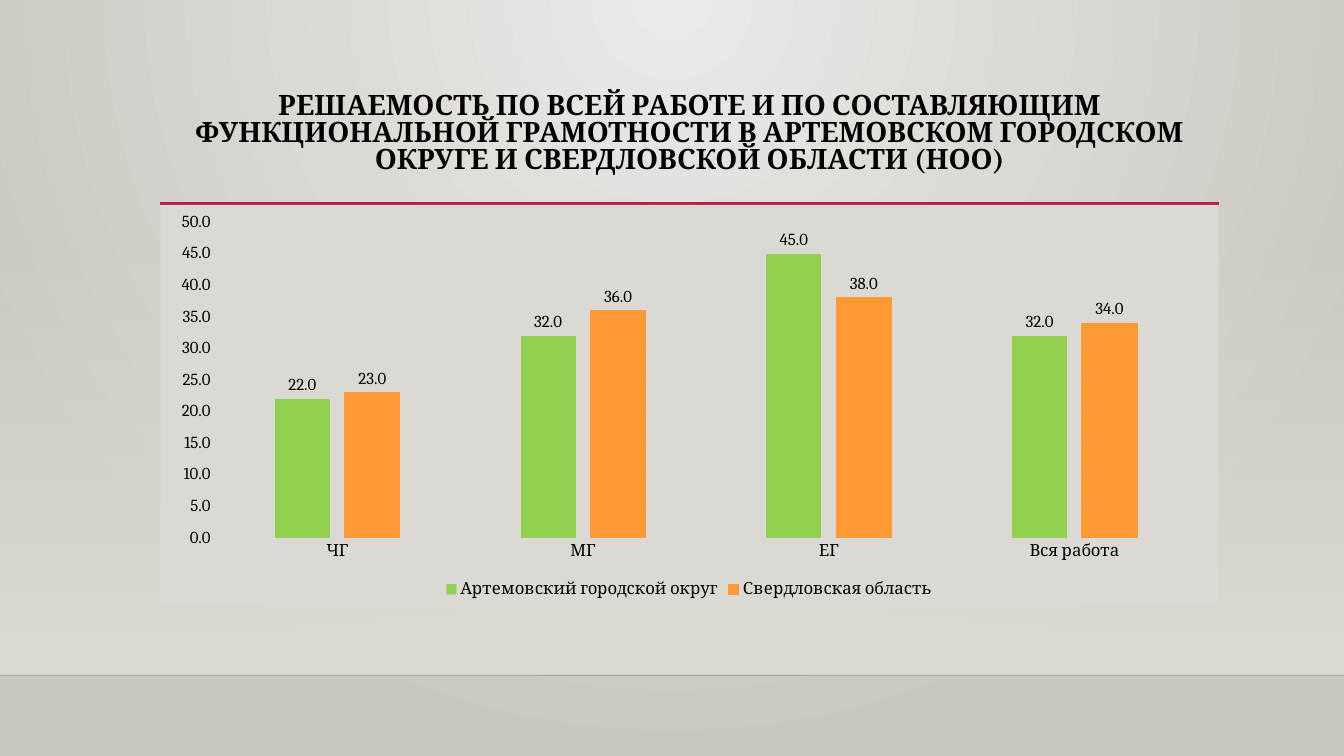
from dataclasses import dataclass

from lxml import etree
from pptx import Presentation
from pptx.chart.data import CategoryChartData
from pptx.dml.color import RGBColor
from pptx.enum.chart import XL_CHART_TYPE, XL_LABEL_POSITION, XL_LEGEND_POSITION, XL_TICK_MARK
from pptx.enum.shapes import MSO_CONNECTOR, MSO_SHAPE
from pptx.enum.text import MSO_ANCHOR, PP_ALIGN
from pptx.oxml import parse_xml
from pptx.oxml.ns import nsdecls, qn
from pptx.util import Cm, Pt

COLUMNS = XL_CHART_TYPE.COLUMN_CLUSTERED
OUTSIDE_END = XL_LABEL_POSITION.OUTSIDE_END
LEGEND_BOTTOM = XL_LEGEND_POSITION.BOTTOM
NO_TICKS = XL_TICK_MARK.NONE
STRAIGHT = MSO_CONNECTOR.STRAIGHT
RECTANGLE = MSO_SHAPE.RECTANGLE
TOP = MSO_ANCHOR.TOP
CENTER = PP_ALIGN.CENTER


@dataclass(frozen=True)
class Theme:
    font: str = "Cambria"
    title_size: int = 20
    chart_size: int = 12
    text: str = "000000"
    glow: str = "ECEAE7"
    edge: str = "CAC7C1"
    wall: str = "DFDBD5"
    floor_line: str = "000001"
    accent: str = "B71E42"
    chart_fill: str = "DCD9D4"
    grid: str = "D9D9D9"
    district: str = "92D050"
    region: str = "FF9933"


THEME = Theme()

# Slide measures in centimetres
SLIDE_WIDTH, SLIDE_HEIGHT = 33.87, 19.05
LEFT, CONTENT_WIDTH = 4.04, 26.67
WALL_TOP, FLOOR = 5.61, 17.02
RULE_TOP, RULE_END = 5.13, 30.73

TITLE = ("РЕШАЕМОСТЬ ПО ВСЕЙ РАБОТЕ И ПО СОСТАВЛЯЮЩИМ ФУНКЦИОНАЛЬНОЙ ГРАМОТНОСТИ "
         "В АРТЕМОВСКОМ ГОРОДСКОМ ОКРУГЕ И СВЕРДЛОВСКОЙ ОБЛАСТИ (НОО)")
CATEGORIES = ["ЧГ", "МГ", "ЕГ", "Вся работа"]
SERIES = [
    ("Артемовский городской округ", (22, 32, 45, 32), THEME.district),
    ("Свердловская область", (23, 36, 38, 34), THEME.region),
]


def rgb(color):
    return RGBColor.from_string(color)


def set_font(font, size, color=THEME.text, bold=False):
    font.name = THEME.font
    font.size = Pt(size)
    font.bold = bold
    font.color.rgb = rgb(color)


def set_line(line, color, width):
    line.color.rgb = rgb(color)
    line.width = Pt(width)


def set_gradient(properties, stops, direction):
    """Replace a solid fill by a gradient of (position, color, opacity) stops."""
    stop_xml = "".join(
        f'<a:gs pos="{position * 1000}"><a:srgbClr val="{color}">'
        f'<a:alpha val="{opacity * 1000}"/></a:srgbClr></a:gs>'
        for position, color, opacity in stops)
    gradient = parse_xml(f'<a:gradFill {nsdecls("a")} rotWithShape="1">'
                         f'<a:gsLst>{stop_xml}</a:gsLst>{direction}</a:gradFill>')
    properties.replace(properties.find(qn("a:solidFill")), gradient)


def add_background(slide):
    slide.background.fill.solid()
    properties = slide.element.find(".//" + qn("p:bgPr"))
    set_gradient(properties, [(0, THEME.glow, 100), (100, THEME.edge, 100)],
                 '<a:path path="circle">'
                 '<a:fillToRect l="43000" t="0" r="43000" b="100000"/></a:path>')


def add_wall(slide):
    shape = slide.shapes.add_shape(RECTANGLE, Cm(0), Cm(WALL_TOP),
                                   Cm(SLIDE_WIDTH), Cm(FLOOR - WALL_TOP))
    shape.shadow.inherit = False
    shape.line.fill.background()
    shape.fill.solid()
    set_gradient(shape.element.spPr, [(0, THEME.wall, 0), (100, THEME.wall, 100)],
                 '<a:lin ang="5400000" scaled="0"/>')


def add_rule(slide, start, end, top, color, width, opacity=100):
    connector = slide.shapes.add_connector(STRAIGHT, Cm(start), Cm(top), Cm(end), Cm(top))
    set_line(connector.line, color, width)
    properties = connector.element.spPr
    if opacity < 100:
        color_element = properties.find(".//" + qn("a:srgbClr"))
        etree.SubElement(color_element, qn("a:alpha"), val=str(opacity * 1000))
    etree.SubElement(properties, qn("a:effectLst"))


def add_text(slide, text, left, top, width, height, *, size, bold=False,
             align=CENTER, anchor=TOP, line_spacing=1.0):
    shape = slide.shapes.add_textbox(Cm(left), Cm(top), Cm(width), Cm(height))
    frame = shape.text_frame
    frame.word_wrap = True
    frame.vertical_anchor = anchor
    paragraph = frame.paragraphs[0]
    paragraph.alignment = align
    paragraph.line_spacing = line_spacing
    run = paragraph.add_run()
    run.text = text
    set_font(run.font, size, bold=bold)


def style_axes(chart):
    for axis in (chart.category_axis, chart.value_axis):
        axis.major_tick_mark = axis.minor_tick_mark = NO_TICKS
        set_font(axis.tick_labels.font, THEME.chart_size)
    set_line(chart.category_axis.format.line, THEME.grid, 0.75)
    values = chart.value_axis
    values.minimum_scale, values.maximum_scale, values.major_unit = 0, 50, 5
    values.format.line.fill.background()
    set_line(values.major_gridlines.format.line, THEME.grid, 0.75)
    values.tick_labels.number_format = "0.0"
    values.tick_labels.number_format_is_linked = False


def style_series(series, color):
    series.format.fill.solid()
    series.format.fill.fore_color.rgb = rgb(color)
    if color == THEME.region:
        set_line(series.format.line, color, 0.75)
    labels = series.data_labels
    labels.show_value = True
    labels.position = OUTSIDE_END
    labels.number_format = "0.0"
    labels.number_format_is_linked = False
    set_font(labels.font, THEME.chart_size)


def add_column_chart(slide, left, top, width, height):
    data = CategoryChartData(number_format="0.0")
    data.categories = CATEGORIES
    for name, values, _ in SERIES:
        data.add_series(name, values)
    chart = slide.shapes.add_chart(COLUMNS, Cm(left), Cm(top), Cm(width), Cm(height), data).chart
    set_font(chart.font, THEME.chart_size)
    chart.has_title = False
    chart.has_legend = True
    chart.legend.position = LEGEND_BOTTOM
    chart.legend.include_in_layout = False
    set_font(chart.legend.font, THEME.chart_size)
    style_axes(chart)

    plot = chart.plots[0]
    plot.vary_by_categories = False
    plot.gap_width, plot.overlap = 219, -27
    for series, (_, _, color) in zip(plot.series, SERIES):
        style_series(series, color)

    # Chart area fill
    chart._chartSpace.find(qn("c:chart")).addnext(parse_xml(
        f'<c:spPr {nsdecls("c", "a")}><a:solidFill><a:srgbClr val="{THEME.chart_fill}"/>'
        '</a:solidFill><a:ln><a:noFill/></a:ln></c:spPr>'))


def main():
    presentation = Presentation()
    presentation.slide_width, presentation.slide_height = Cm(SLIDE_WIDTH), Cm(SLIDE_HEIGHT)
    slide = presentation.slides.add_slide(presentation.slide_layouts[6])

    # Backdrop: wall, floor edge and title rule
    add_background(slide)
    add_wall(slide)
    add_rule(slide, 0, SLIDE_WIDTH, FLOOR, THEME.floor_line, 1, opacity=20)
    add_rule(slide, LEFT, RULE_END, RULE_TOP, THEME.accent, 2.5)

    # Title and chart
    add_text(slide, TITLE, LEFT, 2.24, CONTENT_WIDTH, 2.92,
             size=THEME.title_size, bold=True, line_spacing=0.8)
    add_column_chart(slide, LEFT, 5.16, CONTENT_WIDTH, 10.03)
    presentation.save("out.pptx")


if __name__ == "__main__":
    main()
